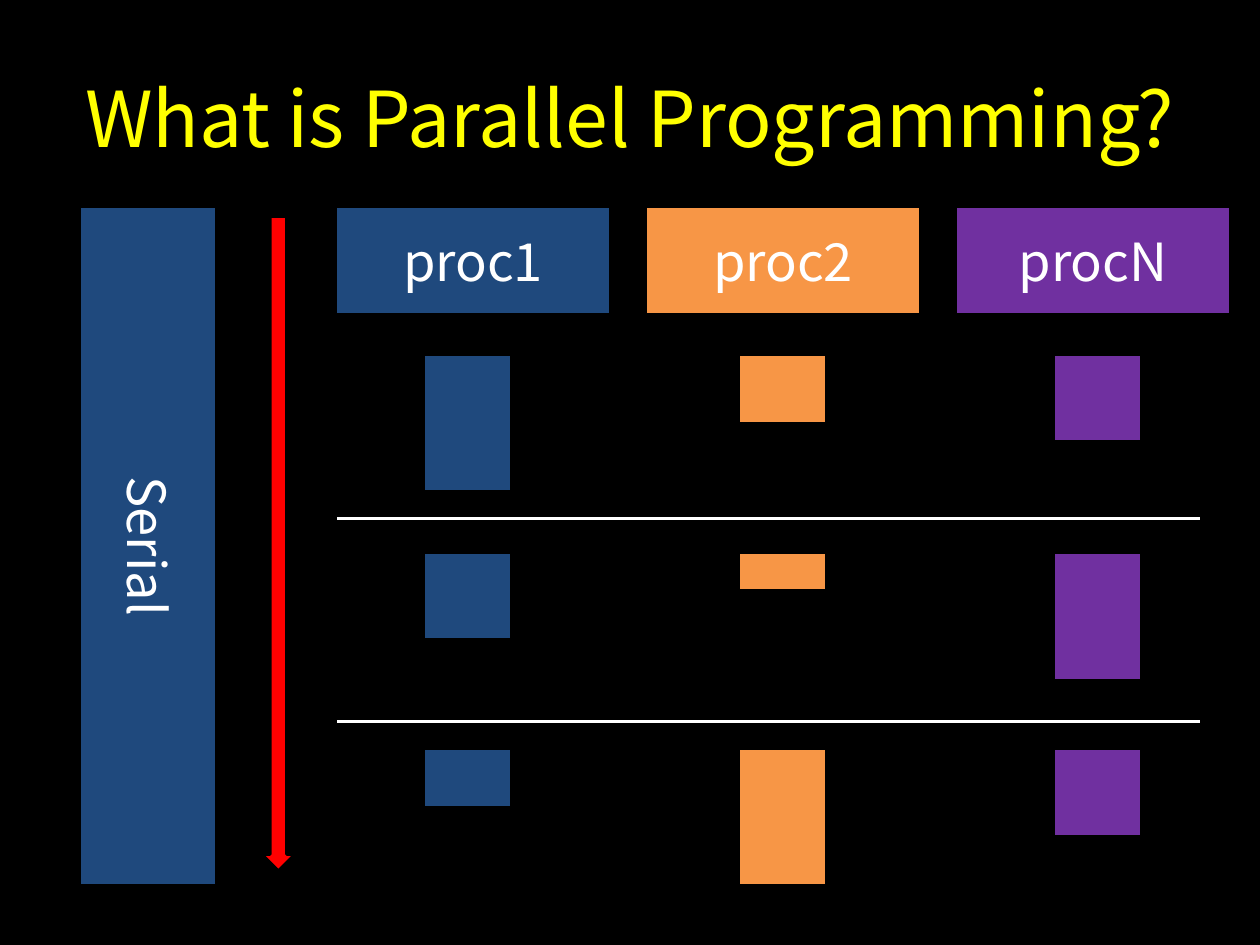
from pptx import Presentation
from pptx.dml.color import RGBColor
from pptx.enum.shapes import MSO_SHAPE as Shape
from pptx.enum.text import MSO_ANCHOR as Anchor, MSO_AUTO_SIZE as AutoSize, PP_ALIGN as Align
from pptx.util import Inches, Pt

BLACK, WHITE, RED, YELLOW = "000000", "FFFFFF", "FF0000", "FFFF00"
BLUE, ORANGE, PURPLE = "1F497D", "F79646", "7030A0"


def color(hex_string):
    return RGBColor.from_string(hex_string)


class SlideBuilder:
    font_name = "Noto Sans CJK KR"
    title_size = 44
    label_size = 30
    outline = 2

    def __init__(self, presentation):
        self.slide = presentation.slides.add_slide(presentation.slide_layouts[5])
        background = self.slide.background.fill
        background.solid()
        background.fore_color.rgb = color(BLACK)

    def set_text(self, shape, text, size, text_color):
        frame = shape.text_frame
        frame.text = text
        frame.word_wrap = True
        frame.auto_size = AutoSize.NONE
        frame.vertical_anchor = Anchor.MIDDLE
        paragraph = frame.paragraphs[0]
        paragraph.alignment = Align.CENTER
        font = paragraph.font
        font.name = self.font_name
        font.size = Pt(size)
        font.color.rgb = color(text_color)

    def title(self, text, left, top, width, height):
        title = self.slide.shapes.title
        title.left, title.top = Inches(left), Inches(top)
        title.width, title.height = Inches(width), Inches(height)
        self.set_text(title, text, self.title_size, YELLOW)

    def block(self, left, top, width, height, fill, text=None, kind=Shape.RECTANGLE, rotation=0):
        shape = self.slide.shapes.add_shape(
            kind, Inches(left), Inches(top), Inches(width), Inches(height))
        shape.shadow.inherit = False
        shape.rotation = rotation
        shape.fill.solid()
        shape.fill.fore_color.rgb = color(fill)
        shape.line.color.rgb = color(BLACK)
        shape.line.width = Pt(self.outline)
        if text:
            self.set_text(shape, text, self.label_size, WHITE)


def main():
    presentation = Presentation()
    presentation.slide_width, presentation.slide_height = Inches(10), Inches(7.5)
    builder = SlideBuilder(presentation)

    builder.title("What is Parallel Programming?", 0.5, 0.3, 9, 1.25)
    builder.block(-1.52, 3.79, 5.39, 1.09, BLUE, "Serial", rotation=90)
    builder.block(-0.39, 4.18, 5.2, 0.27, RED, kind=Shape.RIGHT_ARROW, rotation=90)

    # Each process has a header and one task per stage, given by its height
    processes = [
        ("proc1", BLUE, (1.09, 0.7, 0.47)),
        ("proc2", ORANGE, (0.55, 0.31, 1.09)),
        ("procN", PURPLE, (0.7, 1.02, 0.7)),
    ]
    stage_tops = (2.81, 4.38, 5.94)
    for column, (name, fill, task_heights) in enumerate(processes):
        builder.block(2.66 + 2.46 * column, 1.64, 2.19, 0.86, fill, name)
        for top, height in zip(stage_tops, task_heights):
            builder.block(3.36 + 2.5 * column, top, 0.7, height, fill)

    for barrier_top in (4.09, 5.7):
        builder.block(2.66, barrier_top, 6.88, 0.05, WHITE)

    presentation.save("out.pptx")


if __name__ == "__main__":
    main()
